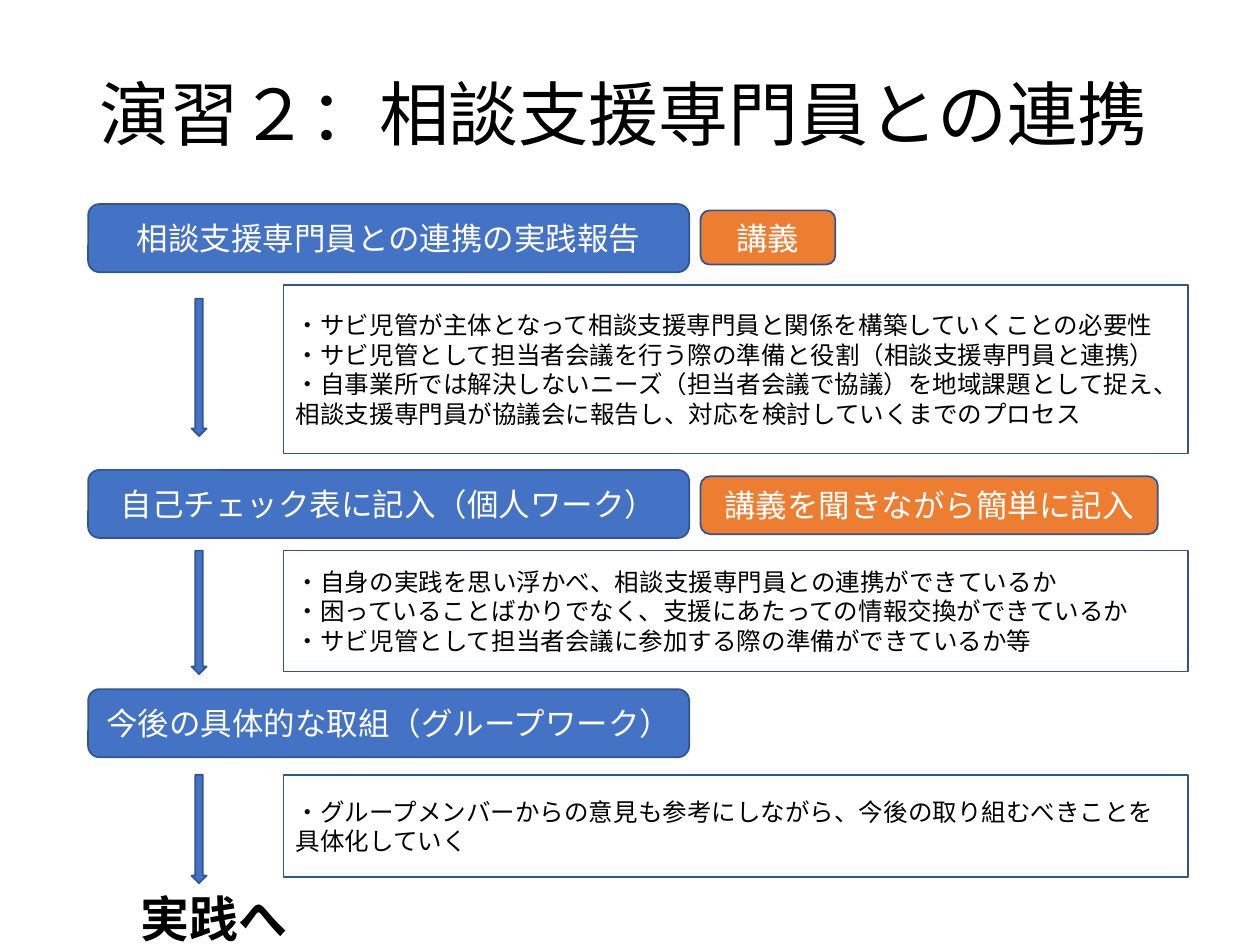
from pptx import Presentation
from pptx.dml.color import RGBColor
from pptx.enum.shapes import MSO_SHAPE
from pptx.enum.text import MSO_ANCHOR, PP_ALIGN
from pptx.util import Inches, Pt

COLORS = {"blue": "4472C4", "orange": "ED7D31", "outline": "325491",
          "white": "FFFFFF", "black": "000000"}


def write(shape, lines, size, color, align=PP_ALIGN.LEFT, anchor=MSO_ANCHOR.MIDDLE):
    frame = shape.text_frame
    frame.word_wrap = True
    frame.vertical_anchor = anchor
    frame.text = "\n".join(lines)
    for para in frame.paragraphs:
        para.alignment = align
        para.font.size = Pt(size)
        para.font.name = "Calibri"
        para.font.color.rgb = RGBColor.from_string(COLORS[color])
    return frame.paragraphs[0]


def add_box(kind, left, top, width, height, fill=None):
    box = page.shapes.add_shape(kind, Inches(left), Inches(top), Inches(width), Inches(height))
    box.shadow.inherit = False
    if fill:
        box.fill.solid()
        box.fill.fore_color.rgb = RGBColor.from_string(COLORS[fill])
    else:
        box.fill.background()
    box.line.color.rgb = RGBColor.from_string(COLORS["outline"])
    box.line.width = Pt(1)
    return box


deck = Presentation()
deck.slide_width, deck.slide_height = Inches(10), Inches(7.5)
page = deck.slides.add_slide(deck.slide_layouts[6])

# Title
title = page.shapes.add_textbox(Inches(0.69), Inches(0.21), Inches(8.62), Inches(1.45))
write(title, ["演習２：相談支援専門員との連携"], 40, "black").line_spacing = 0.9

# Steps: top, heading, (tag, top, width, height), arrow (top, height),
# detail (top, height), detail lines
steps = [
    (1.62, "相談支援専門員との連携の実践報告", ("講義", 1.67, 1.07, 0.43),
     (2.37, 1.09), (2.26, 1.34),
     ["・サビ児管が主体となって相談支援専門員と関係を構築していくことの必要性",
      "・サビ児管として担当者会議を行う際の準備と役割（相談支援専門員と連携）",
      "・自事業所では解決しないニーズ（担当者会議で協議）を地域課題として捉え、"
      "相談支援専門員が協議会に報告し、対応を検討していくまでのプロセス"]),
    (3.73, "自己チェック表に記入（個人ワーク）", ("講義を聞きながら簡単に記入", 3.78, 3.63, 0.46),
     (4.37, 0.98), (4.37, 0.96),
     ["・自身の実践を思い浮かべ、相談支援専門員との連携ができているか",
      "・困っていることばかりでなく、支援にあたっての情報交換ができているか",
      "・サビ児管として担当者会議に参加する際の準備ができているか等"]),
    (5.47, "今後の具体的な取組（グループワーク）", None,
     (6.15, 0.86), (6.15, 0.81),
     ["・グループメンバーからの意見も参考にしながら、今後の取り組むべきことを具体化していく"]),
]

for top, heading, tag, arrow, detail, lines in steps:
    step_box = add_box(MSO_SHAPE.ROUNDED_RECTANGLE, 0.7, top, 4.77, 0.54, "blue")
    write(step_box, [heading], 18, "white", PP_ALIGN.CENTER)
    add_box(MSO_SHAPE.DOWN_ARROW, 1.52, arrow[0], 0.12, arrow[1], "blue")
    detail_box = add_box(MSO_SHAPE.RECTANGLE, 2.25, detail[0], 7.18, detail[1])
    write(detail_box, lines, 14, "black")
    if tag:
        label, tag_top, width, height = tag
        tag_box = add_box(MSO_SHAPE.ROUNDED_RECTANGLE, 5.56, tag_top, width, height, "orange")
        write(tag_box, [label], 18, "white", PP_ALIGN.CENTER)

# Closing words
closing = page.shapes.add_textbox(Inches(1.02), Inches(7), Inches(2.36), Inches(0.57))
write(closing, ["実践へ"], 28, "black", anchor=MSO_ANCHOR.TOP).font.bold = True

deck.save("out.pptx")
